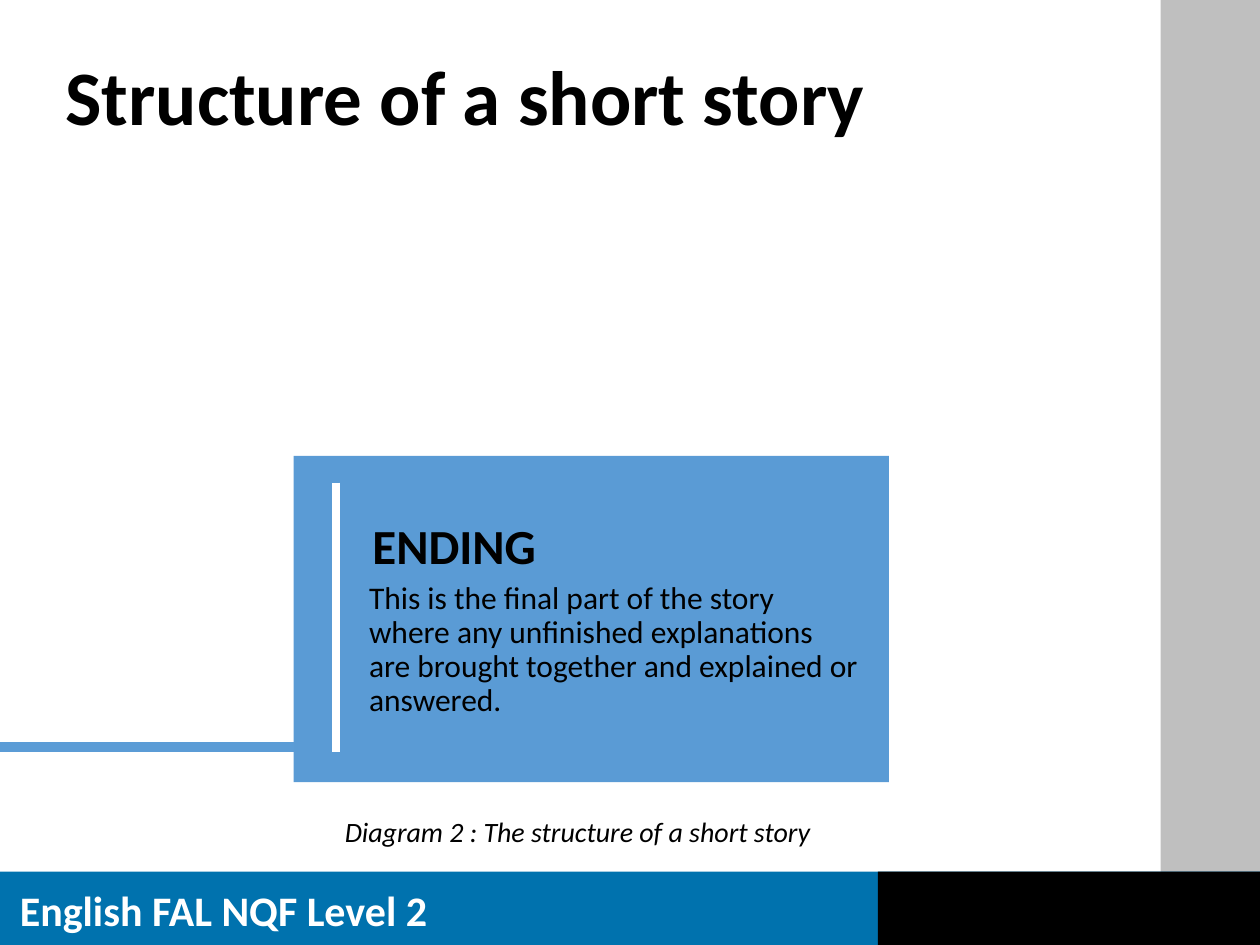
from lxml import etree
from pptx import Presentation
from pptx import util as u
from pptx.dml.color import RGBColor
from pptx.enum import shapes, text
from pptx.oxml.ns import qn

WHITE = RGBColor(0xFF, 0xFF, 0xFF)
BLACK = RGBColor(0x00, 0x00, 0x00)
GREY = RGBColor(0xBF, 0xBF, 0xBF)
FOOTER_BLUE = RGBColor(0x00, 0x72, 0xAE)
CARD_BLUE = RGBColor(0x5A, 0x9B, 0xD5)
LINE_BLUE = RGBColor(0x5B, 0x9C, 0xD6)

deck = Presentation()
deck.slide_width, deck.slide_height = u.Cm(25.4), u.Cm(19.05)
page = deck.slides.add_slide(deck.slide_layouts[6])


def add_panel(left, top, width, height, color):
    panel = page.shapes.add_shape(
        shapes.MSO_SHAPE.RECTANGLE, u.Cm(left), u.Cm(top), u.Cm(width), u.Cm(height))
    panel.shadow.inherit = False
    panel.fill.solid()
    panel.fill.fore_color.rgb = color
    panel.line.fill.background()
    return panel


def write(box, words, size, color=BLACK, bold=False, italic=False, spacing=0.9,
          align=text.PP_ALIGN.LEFT, top_inset=None):
    frame = box.text_frame
    frame.word_wrap = True
    frame.vertical_anchor = text.MSO_ANCHOR.MIDDLE
    if top_inset is not None:
        frame.vertical_anchor = text.MSO_ANCHOR.TOP
        frame.margin_top = u.Cm(top_inset)
    para = frame.paragraphs[0]
    para.text = words
    para.alignment = align
    para.line_spacing = spacing
    font = para.font
    font.name, font.size = "Calibri", u.Pt(size)
    font.bold, font.italic = bold, italic
    font.color.rgb = color


# Side band and footer
add_panel(23.4, 0, 2, 19.03, GREY)
add_panel(0, 17.57, 25.4, 1.48, FOOTER_BLUE)
add_panel(17.7, 17.57, 7.7, 1.48, BLACK)
footer = page.shapes.add_textbox(u.Cm(0.15), u.Cm(17.7), u.Cm(9.53), u.Cm(1.28))
write(footer, "English FAL NQF Level 2", 24, WHITE, bold=True, spacing=1.0)

# Title and caption
title = page.shapes.add_textbox(u.Cm(1.07), u.Cm(1.02), u.Cm(21.97), u.Cm(2))
write(title, "Structure of a short story", 44, bold=True)
caption = page.shapes.add_textbox(u.Cm(0.66), u.Cm(16.46), u.Cm(21.97), u.Cm(0.69))
write(caption, "Diagram 2 : The structure of a short story", 16, italic=True,
      align=text.PP_ALIGN.CENTER)

# Card with its incoming line and white rule
add_panel(5.92, 9.19, 12, 6.58, CARD_BLUE)
for x1, y1, x2, y2, color, weight in (
        (0, 15.06, 5.92, 15.06, LINE_BLUE, 6),
        (6.78, 9.73, 6.78, 15.16, WHITE, 4.5)):
    rule = page.shapes.add_connector(
        shapes.MSO_CONNECTOR.STRAIGHT, u.Cm(x1), u.Cm(y1), u.Cm(x2), u.Cm(y2))
    rule.line.color.rgb = color
    rule.line.width = u.Pt(weight)
    etree.SubElement(rule.element.spPr, qn("a:effectLst"))

# Card text
body = add_panel(7.19, 10.59, 10.36, 4.5, CARD_BLUE)
write(body, "This is the final part of the story where any unfinished explanations "
      "are brought together and explained or answered.", 18, top_inset=1.14)
heading = add_panel(7.26, 10.59, 5.72, 0.71, CARD_BLUE)
write(heading, "ENDING", 28, bold=True, spacing=0.6, top_inset=0.23)

deck.save("out.pptx")
